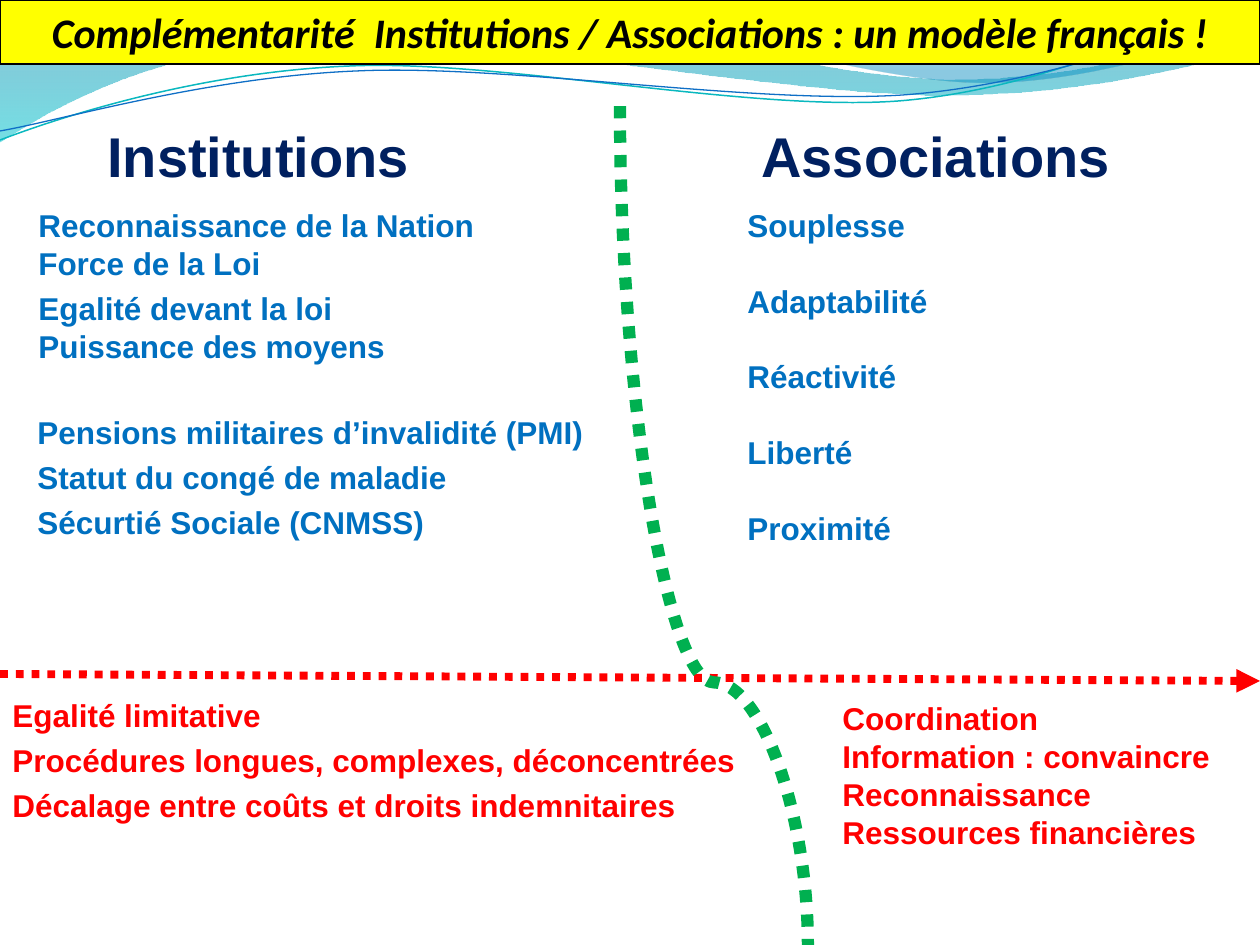
from lxml.etree import SubElement
from pptx import Presentation
from pptx.dml.color import RGBColor
from pptx.enum.dml import MSO_LINE
from pptx.enum.shapes import MSO_CONNECTOR
from pptx.enum.text import MSO_ANCHOR, MSO_AUTO_SIZE, PP_ALIGN
from pptx.oxml.ns import qn
from pptx.util import Pt

WIDTH, HEIGHT = 1260, 945
EMU_PER_PX = 914400 / 126
COLORS = {
    "yellow": "FFFF00", "black": "000000", "navy": "002060", "blue": "0070C0",
    "red": "FF0000", "green": "00B050", "teal line": "0AB8BF", "blue line": "0F6FC6",
    "deep blue": "0074A1", "cyan": "00C6CF", "teal": "00A1A9", "sea blue": "008BBF",
}

# Waves: a start point, then steps of one point (straight) or three (cubic curve)
LEFT_WAVE = [
    (0, -1), [(554, -1)],
    [(600, 21), (837, 79), (955, 79)], [(1075, 79), (1207, 47), (1260, 11)],
    [(1261, 45)],
    [(1239, 55), (1096, 96), (940, 95)], [(784, 95), (481, 35), (324, 43)],
    [(163, 44), (58, 105), (-1, 142)], [(0, -1)],
]
RIGHT_WAVE = [
    (604, -1), [(641, 14), (859, 78), (969, 82)],
    [(1079, 87), (1211, 40), (1260, 26)], [(1260, 0)], [(604, -1)],
]
TEAL_WAVE = [
    (0, 140), [(60, 117), (199, 72), (349, 66)],
    [(498, 59), (747, 112), (898, 101)], [(1050, 89), (1182, 19), (1257, -2)],
]
BLUE_WAVE = [
    (0, 131), [(59, 121), (207, 77), (357, 71)],
    [(508, 64), (752, 105), (903, 95)], [(1053, 84), (1186, 26), (1260, 8)],
]


def px(length):
    return round(length * EMU_PER_PX)


def color(name):
    return RGBColor.from_string(COLORS[name])


def add_wave(page, outline, close):
    start, *steps = outline
    builder = page.shapes.build_freeform(*map(px, start))
    builder.add_line_segments(
        [tuple(map(px, point)) for step in steps for point in step], close=close)
    wave = builder.convert_to_shape()
    wave.shadow.inherit = False
    # Join each three segments of a curved step into one cubic curve
    segments = iter(list(wave._element.iter(qn("a:lnTo"))))
    for step in steps:
        parts = [next(segments) for _ in step]
        if len(parts) == 3:
            curve = parts[0]
            curve.tag = qn("a:cubicBezTo")
            for part in parts[1:]:
                curve.append(part[0])
                part.getparent().remove(part)
    return wave


def add_filled_wave(page, outline, stops):
    """Stops are (position, colour name, opacity in percent), from top to bottom."""
    wave = add_wave(page, outline, True)
    wave.line.fill.background()
    wave.fill.gradient()
    wave.fill.gradient_angle = 270
    for stop, (position, name, _) in zip(wave.fill.gradient_stops, stops):
        stop.position = position
        stop.color.rgb = color(name)
    tints = wave._element.spPr.iter(qn("a:srgbClr"))
    for tint, (_, _, opacity) in zip(tints, stops):
        SubElement(tint, qn("a:alpha"), val=str(opacity * 1000))


def add_line_wave(page, outline, name, width):
    wave = add_wave(page, outline, False)
    wave.fill.background()
    wave.line.color.rgb = color(name)
    wave.line.width = Pt(width)


def add_dotted_line(page, kind, start, end, name, width):
    connector = page.shapes.add_connector(kind, *map(px, (*start, *end)))
    connector.line.color.rgb = color(name)
    connector.line.width = Pt(width)
    connector.line.dash_style = MSO_LINE.ROUND_DOT
    SubElement(connector._element.spPr, qn("a:effectLst"))
    return connector


def add_arrow(page, start, end):
    arrow = add_dotted_line(page, MSO_CONNECTOR.STRAIGHT, start, end, "red", 4.5)
    SubElement(arrow.line._get_or_add_ln(), qn("a:tailEnd"), type="triangle")


def add_divider(page, start, end, bend):
    """S-curve from top to bottom: a sideways curve turned by 270 degrees; bend in percent."""
    middle_x, middle_y = (start[0] + end[0]) / 2, (start[1] + end[1]) / 2
    half_length, half_width = (end[1] - start[1]) / 2, (end[0] - start[0]) / 2
    divider = add_dotted_line(
        page, MSO_CONNECTOR.CURVE,
        (middle_x + half_length, middle_y - half_width),
        (middle_x - half_length, middle_y + half_width), "green", 7)
    properties = divider._element.spPr
    properties.find(qn("a:xfrm")).set("rot", str(270 * 60000))
    guides = properties.find(qn("a:prstGeom")).get_or_add_avLst()
    SubElement(guides, qn("a:gd"), name="adj1", fmla=f"val {round(bend * 1000)}")


def style_font(font, name, size, tint):
    font.name = name
    font.size = Pt(size)
    font.bold = True
    font.color.rgb = color(tint)


def add_banner(page, text):
    banner = page.shapes.title
    page.shapes._spTree.append(banner._element)  # in front of the waves
    banner.left, banner.top, banner.width, banner.height = map(px, (0, 0, WIDTH, 64))
    banner.fill.solid()
    banner.fill.fore_color.rgb = color("yellow")
    banner.line.color.rgb = color("black")
    banner.line.width = Pt(0.75)
    frame = banner.text_frame
    frame.text = text
    frame.word_wrap = True
    frame.auto_size = MSO_AUTO_SIZE.NONE
    frame.vertical_anchor = MSO_ANCHOR.MIDDLE
    para = frame.paragraphs[0]
    para.alignment = PP_ALIGN.CENTER
    style_font(para.font, "Calibri", 24, "black")
    para.font.italic = True


def add_text(page, place, lines, tint, size=18, spaced=(), gap=0):
    """Spaced holds the indexes of lines set at 1.2; gap is the space between lines."""
    box = page.shapes.add_textbox(*map(px, place))
    frame = box.text_frame
    frame.word_wrap = False
    frame.auto_size = MSO_AUTO_SIZE.SHAPE_TO_FIT_TEXT
    for index, line in enumerate(lines):
        para = frame.add_paragraph() if index else frame.paragraphs[0]
        para.text = line
        if index and gap:
            para.space_before = Pt(gap)
        if index in spaced:
            para.line_spacing = 1.2
        style_font(para.font, "Arial", size, tint)


def main():
    deck = Presentation()
    deck.slide_width, deck.slide_height = px(WIDTH), px(HEIGHT)
    page = deck.slides.add_slide(deck.slide_layouts[5])

    # Wave decoration
    add_filled_wave(page, LEFT_WAVE, [(0, "deep blue", 45), (1, "cyan", 55)])
    add_filled_wave(page, RIGHT_WAVE, [(0, "teal", 30), (0.8, "sea blue", 45)])
    add_line_wave(page, TEAL_WAVE, "teal line", 0.85)
    add_line_wave(page, BLUE_WAVE, "blue line", 0.75)

    # Banner and dividing lines
    add_arrow(page, (0, 674), (WIDTH, 681))
    add_banner(page, "Complémentarité  Institutions / Associations : un modèle français !")
    add_divider(page, (620, 106), (808, HEIGHT), 68.7)

    # Strengths
    add_text(page, (26, 200, 465, 173), [
        "Reconnaissance de la Nation", "Force de la Loi",
        "Egalité devant la loi", "Puissance des moyens"], "blue", spaced=(2,))
    add_text(page, (25, 399, 577, 149), [
        "Pensions militaires d’invalidité (PMI)", "Statut du congé de maladie",
        "Sécurtié Sociale (CNMSS)"], "blue", spaced=range(3))
    add_text(page, (735, 200, 208, 394), [
        "Souplesse", "Adaptabilité", "Réactivité", "Liberté", "Proximité"],
        "blue", gap=21.6)

    # Limits
    add_text(page, (0, 682, 756, 195), [
        "Egalité limitative", "Procédures longues, complexes, déconcentrées",
        "Décalage entre coûts et droits indemnitaires"], "red", spaced=range(3))
    add_text(page, (830, 693, 397, 204), [
        "Coordination", "Information : convaincre", "Reconnaissance",
        "Ressources financières"], "red")

    # Column headings
    add_text(page, (95, 115, 330, 81), ["Institutions"], "navy", size=32)
    add_text(page, (749, 115, 378, 81), ["Associations"], "navy", size=32)

    deck.save("out.pptx")


if __name__ == "__main__":
    main()
